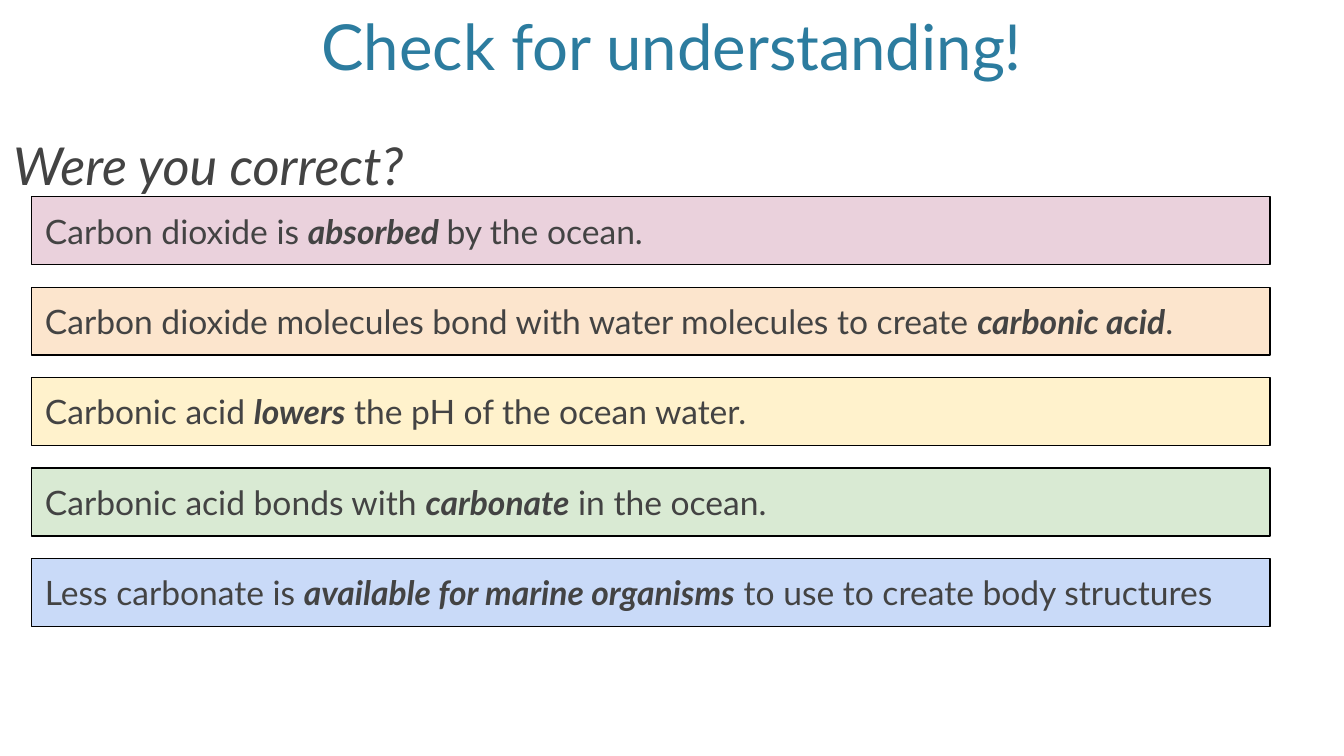
from pptx import Presentation
from pptx.dml.color import RGBColor
from pptx.enum.shapes import MSO_SHAPE
from pptx.enum.text import MSO_ANCHOR, PP_ALIGN
from pptx.util import Cm, Pt

RECT = MSO_SHAPE.RECTANGLE
TOP, MIDDLE = MSO_ANCHOR.TOP, MSO_ANCHOR.MIDDLE
LEFT, CENTER = PP_ALIGN.LEFT, PP_ALIGN.CENTER
GREY = "434343"
WIDE, HIGH = 25.4, 14.29


def color(code):
    return RGBColor.from_string(code)


def write(shape, text, size=18, ink=GREY, italic=False, align=LEFT,
          anchor=TOP, pad=0.13):
    """Fill a shape with text; parts between asterisks are bold italic."""
    frame = shape.text_frame
    frame.word_wrap = True
    frame.vertical_anchor = anchor
    frame.margin_left = frame.margin_right = Cm(0.25)
    frame.margin_top = frame.margin_bottom = Cm(pad)
    para = frame.paragraphs[0]
    para.alignment = align
    for i, part in enumerate(text.split("*")):
        strong = i % 2 == 1
        run = para.add_run()
        run.text = part
        font = run.font
        font.name = "Lato"
        font.size = Pt(size)
        font.bold = strong
        font.italic = italic or strong
        font.color.rgb = color(ink)


deck = Presentation()
deck.slide_width, deck.slide_height = Cm(WIDE), Cm(HIGH)
slide = deck.slides.add_slide(deck.slide_layouts[6])
shapes = slide.shapes

title = shapes.add_textbox(0, 0, Cm(WIDE), Cm(2.38))
write(title, "Check for understanding!", size=34, ink="2C7C9F", align=CENTER)

body = shapes.add_textbox(0, Cm(2.38), Cm(WIDE), Cm(HIGH - 2.38))
write(body, "Were you correct?", size=28, italic=True)

steps = [
    ("EAD1DC", "Carbon dioxide is *absorbed *by the ocean."),
    ("FCE5CD", "Carbon dioxide molecules bond with water molecules "
               "to create *carbonic acid*."),
    ("FFF2CC", "Carbonic acid *lowers* the pH of the ocean water."),
    ("D9EAD3", "Carbonic acid bonds with *carbonate* in the ocean."),
    ("C9DAF8", "Less carbonate is *available for marine organisms* "
               "to use to create body structures"),
]
for row, (fill, text) in enumerate(steps):
    bar = shapes.add_shape(RECT, Cm(0.6), Cm(3.72 + 1.71 * row),
                           Cm(23.4), Cm(1.28))
    bar.shadow.inherit = False
    bar.fill.solid()
    bar.fill.fore_color.rgb = color(fill)
    bar.line.color.rgb = color("000000")
    bar.line.width = Pt(0.75)
    write(bar, text, anchor=MIDDLE, pad=0.25)

deck.save("out.pptx")
